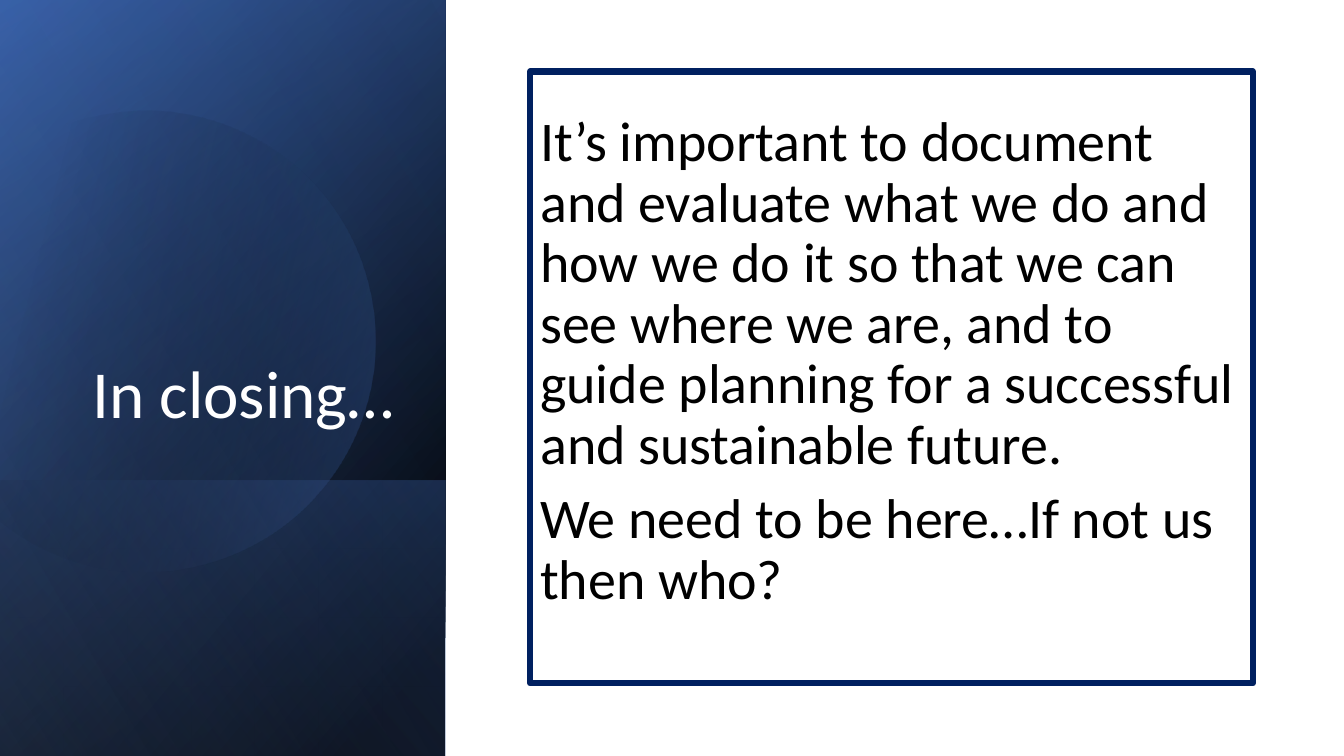
from math import cos, radians, sin

from pptx import Presentation
from pptx.dml.color import RGBColor as Rgb
from pptx.enum.shapes import MSO_SHAPE as Kind
from pptx.enum.text import MSO_ANCHOR as Anchor, MSO_AUTO_SIZE as Fit, PP_ALIGN as Align
from pptx.oxml.ns import qn
from pptx.oxml.xmlchemy import OxmlElement as Node
from pptx.util import Pt

WIDE, HIGH = 960, 540
PANEL = 318.24
TILT = -16.1
DISC = (-39.6, 76.3, 307.4, 329)
OUTLINE = [
    ("moveTo", (107.3, 79.2)),
    ("cubicBezTo", (177.1, 80.6), (241.2, 127.4), (261.4, 198)),
    ("cubicBezTo", (286.6, 285.8), (236.2, 376.6), (149, 401.8)),
    ("cubicBezTo", (94.3, 417.6), (38.2, 403.9), (-2.2, 370.1)),
    ("lnTo", (-10.8, 362.2)),
    ("lnTo", (-10.8, 126)),
    ("lnTo", (0, 115.9)),
    ("cubicBezTo", (16.6, 102.2), (36, 92.2), (57.6, 85.7)),
    ("cubicBezTo", (74.2, 81.4), (90.7, 79.2), (107.3, 79.2)),
    ("close",),
]


def hue(code):
    return Rgb.from_string(code)


def plain(shape):
    shape.shadow.inherit = False
    shape.line.fill.background()


def fade(shape, angle, *stops):
    fill = shape.fill
    fill.gradient()
    fill.gradient_angle = 360 - angle
    for stop, (place, code, _) in zip(fill.gradient_stops, stops):
        stop.position = place / 100
        stop.color.rgb = hue(code)
    tints = shape._element.spPr.iter(qn("a:srgbClr"))
    for tint, (_, _, level) in zip(tints, stops):
        if level < 100:
            alpha = Node("a:alpha")
            alpha.set("val", str(level * 1000))
            tint.append(alpha)


def veil(slide, top, high, angle, *stops):
    left = (PANEL - high) / 2
    up = top + (high - PANEL) / 2
    shape = slide.shapes.add_shape(Kind.RECTANGLE, Pt(left), Pt(up), Pt(high), Pt(PANEL))
    plain(shape)
    shape.rotation = 90
    shape._element.spPr.find(qn("a:xfrm")).set("flipH", "1")
    fade(shape, angle, *stops)


def turn(x, y):
    left, top, wide, high = DISC
    angle = radians(-TILT)
    dx, dy = x - left - wide / 2, y - top - high / 2
    return (
        Pt(wide / 2 + dx * cos(angle) - dy * sin(angle)),
        Pt(high / 2 + dx * sin(angle) + dy * cos(angle)),
    )


def disc(slide):
    left, top, wide, high = map(Pt, DISC)
    pen = slide.shapes.build_freeform(left, top, scale=1.0)
    pen.add_line_segments([(left + wide, top), (left + wide, top + high)])
    shape = pen.convert_to_shape()
    trace = next(shape._element.spPr.iter(qn("a:path")))
    for step in list(trace):
        trace.remove(step)
    for verb, *points in OUTLINE:
        step = Node("a:" + verb)
        for x, y in points:
            dot = Node("a:pt")
            dx, dy = turn(x, y)
            dot.set("x", str(int(dx)))
            dot.set("y", str(int(dy)))
            step.append(dot)
        trace.append(step)
    plain(shape)
    shape.rotation = 360 + TILT
    fade(shape, 30, (29, "000000", 0), (100, "4472C4", 43))


def place(slide, holder, left, top, wide, high):
    slide.shapes._spTree.append(holder._element)
    holder.left, holder.top = Pt(left), Pt(top)
    holder.width, holder.height = Pt(wide), Pt(high)


def write(holder, lines, size, color, align, anchor, foot=3.6):
    frame = holder.text_frame
    frame.word_wrap = True
    frame.auto_size = Fit.NONE
    frame.vertical_anchor = anchor
    frame.margin_bottom = Pt(foot)
    frame.text = "\n".join(lines)
    for index, para in enumerate(frame.paragraphs):
        props = para._p.get_or_add_pPr()
        props.set("marL", "0")
        props.set("indent", "0")
        props.append(Node("a:buNone"))
        para.alignment = align
        para.line_spacing = 0.9
        para.space_before = Pt(10 if index else 0)
        for run in para.runs:
            run.font.name = "Calibri"
            run.font.size = Pt(size)
            run.font.color.rgb = hue(color)


def main():
    deck = Presentation()
    deck.slide_width, deck.slide_height = Pt(WIDE), Pt(HIGH)
    slide = deck.slides.add_slide(deck.slide_layouts[1])

    base = slide.shapes.add_shape(Kind.RECTANGLE, 0, 0, Pt(WIDE), Pt(HIGH))
    plain(base)
    base.fill.solid()
    base.fill.fore_color.rgb = hue("FFFFFF")

    veil(slide, 0, HIGH, 50, (8, "000000", 100), (100, "2F5597", 100))
    veil(slide, 0, HIGH, 30, (0, "000000", 0), (99, "4472C4", 46))
    veil(slide, 343, 197, 130, (2, "4472C4", 29), (100, "000000", 30))
    disc(slide)
    veil(slide, 0, HIGH, 120, (0, "000000", 0), (99, "8FAADC", 11))

    title, body = slide.shapes.title, slide.placeholders[1]
    place(slide, title, 36.7, 46.8, 252, 266.4)
    write(title, ["In closing…"], 48, "FFFFFF", Align.RIGHT, Anchor.BOTTOM)

    place(slide, body, 378.7, 51.1, 516.2, 437)
    body.line.color.rgb = hue("002060")
    body.line.width = Pt(4.5)
    lines = [
        "It’s important to document and evaluate what we do and how we do it "
        "so that we can see where we are, and to guide planning for a "
        "successful and sustainable future.",
        "We need to be here…If not us then who?",
    ]
    write(body, lines, 40, "000000", Align.LEFT, Anchor.MIDDLE, foot=25.4)

    deck.save("out.pptx")


if __name__ == "__main__":
    main()
